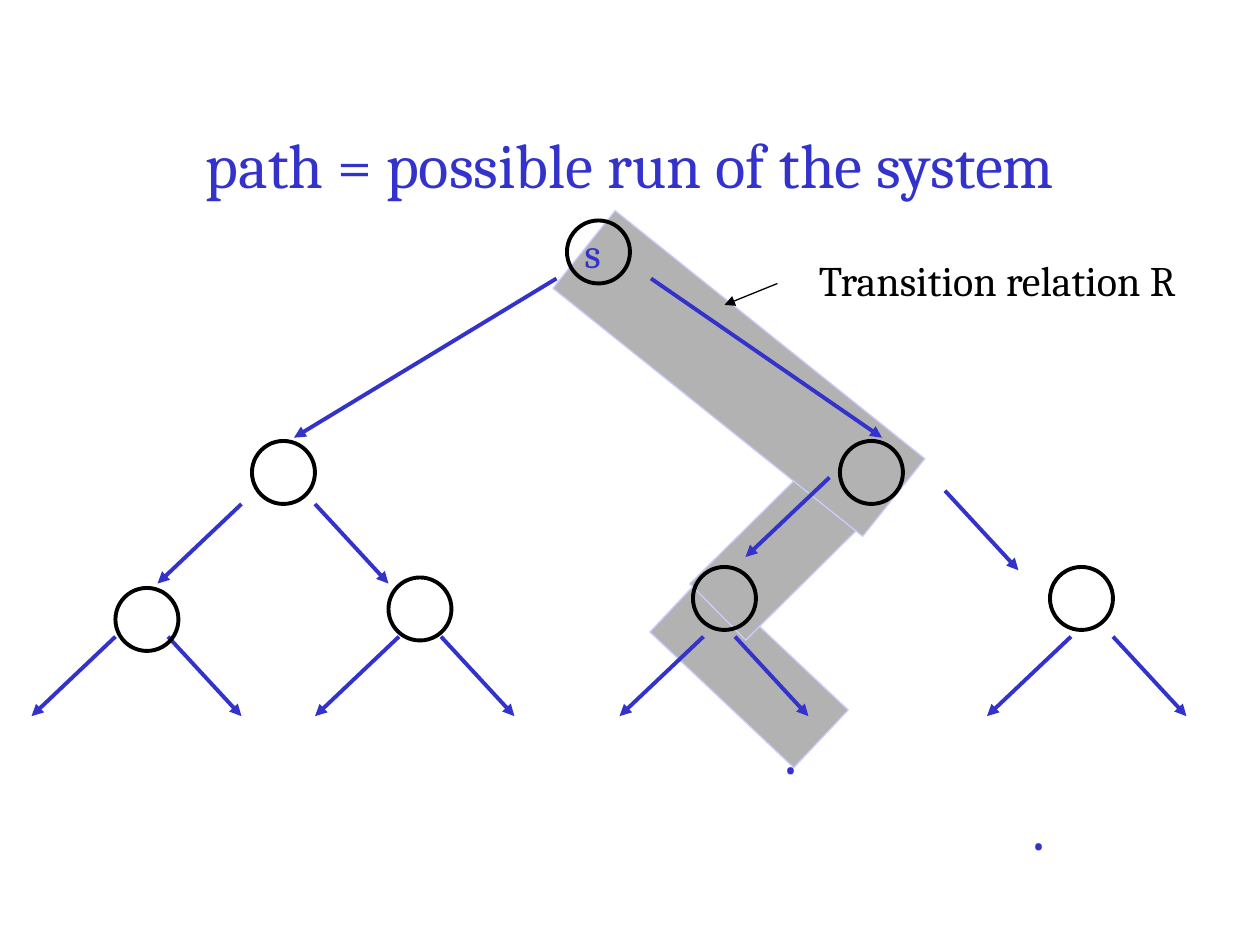
import pptx
import pptx.dml.color
import pptx.enum.shapes
import pptx.enum.text
import pptx.oxml
import pptx.oxml.ns
import pptx.util

Inches, Pt = pptx.util.Inches, pptx.util.Pt
SHAPES = pptx.enum.shapes.MSO_SHAPE
ALIGN = pptx.enum.text.PP_ALIGN
ANCHOR = pptx.enum.text.MSO_ANCHOR
color = pptx.dml.color.RGBColor.from_string

BLUE, BLACK, GRAY, LAVENDER = "3333CC", "000000", "B2B2B2", "CCCCFF"
COLUMN = 10 / 120  # 120 columns across the slide
ROW = 2 / 19       # rows on which the tree arrows start and end
CIRCLE = 6         # circle diameter in columns

presentation = pptx.Presentation()
presentation.slide_width, presentation.slide_height = Inches(10), Inches(7.5)
slide = presentation.slides.add_slide(presentation.slide_layouts[6])


def add_text(lines, box, size, hex_color, align=ALIGN.LEFT, anchor=ANCHOR.TOP, wrap=True):
    """Add a text box; lines holds pairs of text and left indent in inches."""
    frame = slide.shapes.add_textbox(*map(Inches, box)).text_frame
    frame.word_wrap, frame.vertical_anchor = wrap, anchor
    for index, (text, indent) in enumerate(lines):
        paragraph = frame.add_paragraph() if index else frame.paragraphs[0]
        paragraph.alignment = align
        paragraph._p.get_or_add_pPr().set("marL", str(Inches(indent)))
        run = paragraph.add_run()
        run.text = text
        for name, value in {"name": "Cambria", "size": Pt(size)}.items():
            setattr(run.font, name, value)
        run.font.color.rgb = color(hex_color)


def add_arrow(start, end, hex_color, width):
    arrow = slide.shapes.add_connector(
        pptx.enum.shapes.MSO_CONNECTOR.STRAIGHT, *map(Inches, (*start, *end)))
    arrow.line.color.rgb = color(hex_color)
    arrow.line.width = Pt(width)
    head = pptx.oxml.parse_xml(
        f'<a:tailEnd {pptx.oxml.ns.nsdecls("a")} type="triangle"/>')
    arrow.line._get_or_add_ln().append(head)
    arrow._element.spPr.append(
        pptx.oxml.parse_xml(f'<a:effectLst {pptx.oxml.ns.nsdecls("a")}/>'))


# Gray band along the highlighted path
for *box, angle in [(5.16, 5.01, 1.57, 0.63, 223.3),
                    (5.47, 3.99, 1.57, 0.63, 315.3),
                    (4.29, 2.57, 3.15, 0.79, 38.7)]:
    band = slide.shapes.add_shape(SHAPES.RECTANGLE, *map(Inches, box))
    band.rotation = angle
    band.shadow.inherit = False
    band.fill.solid()
    band.fill.fore_color.rgb = color(GRAY)
    band.line.color.rgb = color(LAVENDER)
    band.line.width = Pt(0.75)

add_text([("path = possible run of the system", 0)], (0.75, 0.67, 8.5, 1.25),
         36, BLUE, ALIGN.CENTER, ANCHOR.MIDDLE)
add_text([("s", 0.14)], (4.4, 1.75, 0.5, 0.5), 24, BLUE, wrap=False)

# Tree arrows as (column, row) to (column, row)
tree_arrows = [((53, 21), (28, 33)), ((62, 21), (84, 33))]
left_starts = [(23, 38), (11, 48), (79, 36), (67, 48), (102, 48), (38, 48)]
right_starts = [(30, 38), (90, 37), (106, 48), (70, 48), (42, 48), (16, 48)]
for starts, step in [(left_starts, -8), (right_starts, 7)]:
    tree_arrows += [((column, row), (column + step, row + 6)) for column, row in starts]
for start, end in tree_arrows:
    add_arrow((start[0] * COLUMN, start[1] * ROW),
              (end[0] * COLUMN, end[1] * ROW), BLUE, 2.25)

add_text([(".", 0), (".", 1.97)], (6.13, 5.6, 3.87, 1.9), 36, BLUE)

# States: left and top in columns
for left, top in [(11, 56), (54, 21), (24, 42), (80, 42), (37, 55), (66, 54), (100, 54)]:
    state = slide.shapes.add_shape(
        SHAPES.OVAL, *(Inches(cells * COLUMN) for cells in (left, top, CIRCLE, CIRCLE)))
    state.shadow.inherit = False
    state.fill.background()
    state.line.color.rgb = color(BLACK)
    state.line.width = Pt(2.25)

add_text([("Transition relation R", 0)], (6.4, 1.97, 3.26, 0.5), 24, BLACK, wrap=False)
add_arrow((6.17, 2.25), (5.75, 2.42), BLACK, 0.75)

presentation.save("out.pptx")
